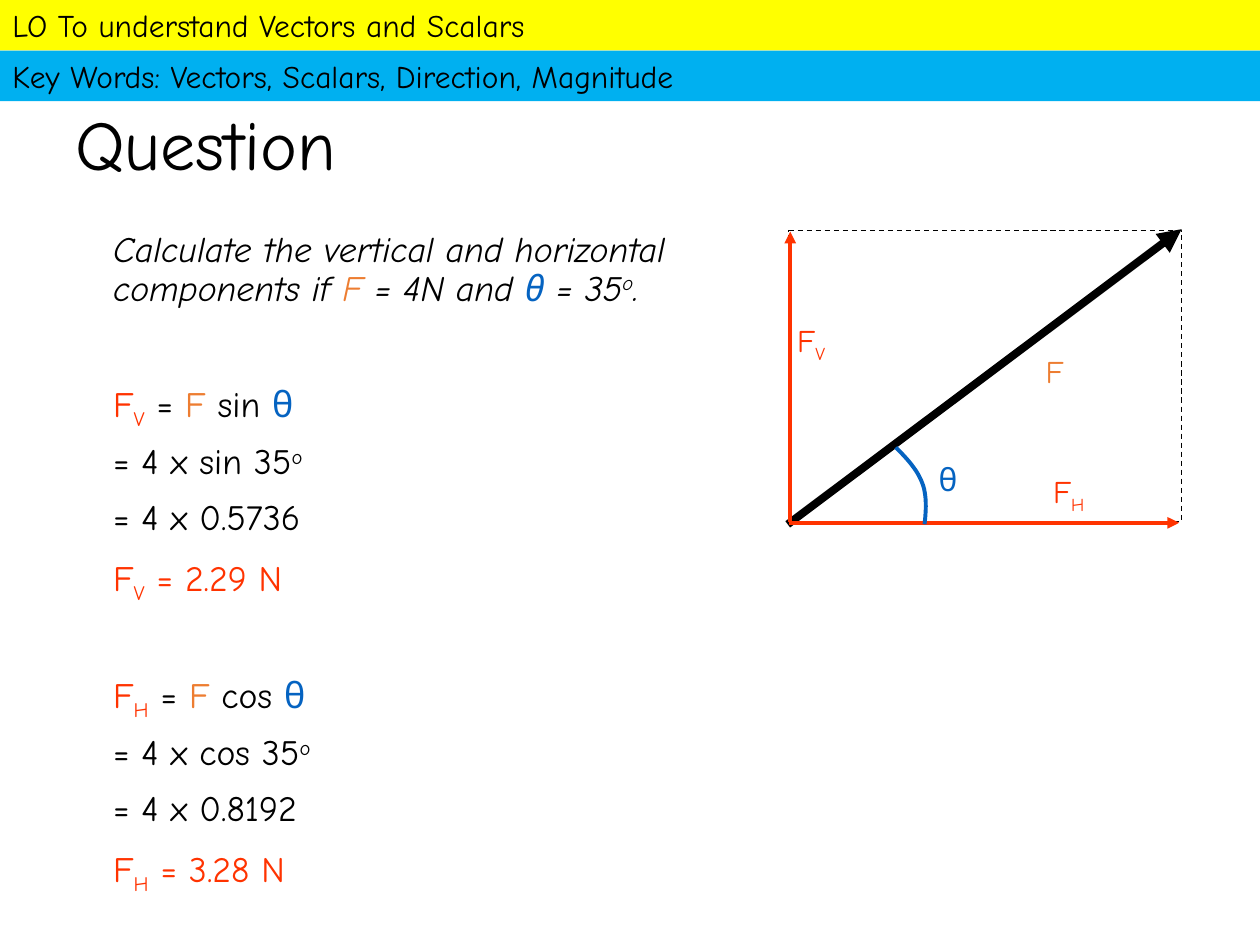
from lxml.etree import SubElement
from pptx import Presentation
from pptx.dml.color import RGBColor
from pptx.enum.dml import MSO_LINE
from pptx.enum.shapes import MSO_CONNECTOR, MSO_SHAPE
from pptx.enum.text import MSO_ANCHOR, PP_ALIGN
from pptx.oxml.ns import qn
from pptx.util import Cm, Pt

FONT = "Comic Neue"
COLOURS = {
    "ink": "000000",
    "objective": "FFFF00",
    "keywords": "00B0F0",
    "force": "ED7D31",
    "angle": "0563C1",
    "component": "FF3300",
}
SUPERSCRIPT, SUBSCRIPT = 30000, -25000
DEGREE = ("o", "ink", SUPERSCRIPT)


def colour(name):
    return RGBColor.from_string(COLOURS[name])


def write(paragraph, parts, size, italic=False):
    paragraph.alignment = PP_ALIGN.LEFT
    paragraph.font.name = FONT
    paragraph.font.size = Pt(size)
    paragraph.font.italic = italic
    for words, shade, *baseline in parts:
        run = paragraph.add_run()
        run.text = words
        run.font.color.rgb = colour(shade)
        if baseline:
            run.font._element.set("baseline", str(baseline[0]))


def add_text(shapes, left, top, width, height):
    frame = shapes.add_textbox(Cm(left), Cm(top), Cm(width), Cm(height)).text_frame
    frame.word_wrap = True
    return frame


def add_banner(slide, left, top, width, height, words, fill):
    banner = slide.shapes.add_shape(
        MSO_SHAPE.RECTANGLE, Cm(left), Cm(top), Cm(width), Cm(height)
    )
    banner.shadow.inherit = False
    banner.fill.solid()
    banner.fill.fore_color.rgb = colour(fill)
    banner.line.fill.background()
    banner.text_frame.vertical_anchor = MSO_ANCHOR.TOP
    write(banner.text_frame.paragraphs[0], [(words, "ink")], 18)


def add_title(slide, left, top, width, height):
    title = add_text(slide.shapes, left, top, width, height)
    title.vertical_anchor = MSO_ANCHOR.MIDDLE
    heading = title.paragraphs[0]
    heading.line_spacing = 0.9
    write(heading, [("Question", "ink")], 40)


def solve(direction, function, ratio, answer):
    symbol = [("F", "component"), (direction, "component", SUBSCRIPT)]
    return [
        symbol
        + [(" = ", "ink"), ("F", "force"), (f" {function} ", "ink"), ("θ", "angle")],
        [(f"= 4 x {function} 35", "ink"), DEGREE],
        [(f"= 4 x {ratio}", "ink")],
        symbol + [(f" = {answer} N", "component")],
    ]


def add_working(slide, left, top, width, height):
    working = add_text(slide.shapes, left, top, width, height)
    question = working.paragraphs[0]
    question.line_spacing = 0.9
    parts = [
        ("Calculate the vertical and horizontal components if ", "ink"),
        ("F", "force"),
        (" = 4N and ", "ink"),
        ("θ ", "angle"),
        ("= 35", "ink"),
        DEGREE,
        (".", "ink"),
    ]
    write(question, parts, 20.4, italic=True)
    solutions = [
        solve("V", "sin", "0.5736", "2.29"),
        solve("H", "cos", "0.8192", "3.28"),
    ]
    for solution in solutions:
        for number, step in enumerate(solution):
            line = working.add_paragraph()
            line.line_spacing = 0.9
            line.space_before = Pt(10 if number else 42)
            write(line, step, 20.4)


def add_vector(shapes, start, end, shade, weight):
    vector = shapes.add_connector(
        MSO_CONNECTOR.STRAIGHT, *(Cm(value) for value in (*start, *end))
    )
    vector.line.color.rgb = colour(shade)
    vector.line.width = Pt(weight)
    SubElement(vector.line._get_or_add_ln(), qn("a:tailEnd"), type="triangle")
    SubElement(vector._element.spPr, qn("a:effectLst"))


def curve(start, first, second, end, steps=12):
    for step in range(1, steps + 1):
        t = step / steps
        weights = ((1 - t) ** 3, 3 * t * (1 - t) ** 2, 3 * t**2 * (1 - t), t**3)
        yield tuple(
            sum(weight * value for weight, value in zip(weights, axis))
            for axis in zip(start, first, second, end)
        )


def add_angle(shapes, left, top):
    start, middle, end = (2.16, 4.37), (2.69, 5.08), (2.74, 5.92)
    points = [
        start,
        *curve(start, (2.39, 4.6), (2.59, 4.82), middle),
        *curve(middle, (2.79, 5.33), (2.77, 5.64), end),
    ]
    places = [(Cm(left + x), Cm(top + y)) for x, y in points]
    builder = shapes.build_freeform(*places[0])
    builder.add_line_segments(places[1:], close=False)
    arc = builder.convert_to_shape()
    arc.shadow.inherit = False
    arc.fill.background()
    arc.line.color.rgb = colour("angle")
    arc.line.width = Pt(2.25)


def add_diagram(slide, left, top, width, height):
    shapes = slide.shapes.add_group_shape().shapes
    right, bottom = left + width, top + height
    add_vector(shapes, (left - 0.02, bottom + 0.05), (right, top - 0.03), "ink", 4.5)

    outline = shapes.add_shape(
        MSO_SHAPE.RECTANGLE, Cm(left), Cm(top), Cm(width), Cm(height)
    )
    outline.shadow.inherit = False
    outline.fill.background()
    outline.line.color.rgb = colour("ink")
    outline.line.width = Pt(0.75)
    outline.line.dash_style = MSO_LINE.DASH

    add_vector(
        shapes, (left + 0.03, bottom), (left + 0.03, top + 0.02), "component", 2.25
    )
    add_vector(
        shapes, (left, bottom + 0.02), (right - 0.05, bottom + 0.02), "component", 2.25
    )
    add_angle(shapes, left, top)

    labels = [
        (4.93, 2.33, 1.32, [("F", "force")]),
        (-0.08, 1.7, 1.52, [("F", "component"), ("V", "component", SUBSCRIPT)]),
        (5.08, 4.75, 1.52, [("F", "component"), ("H", "component", SUBSCRIPT)]),
        (2.77, 4.49, 2.11, [("θ", "angle")]),
    ]
    for x, y, label_width, parts in labels:
        label = add_text(shapes, left + x, top + y, label_width, 1.02)
        write(label.paragraphs[0], parts, 18)


def main():
    presentation = Presentation()
    presentation.slide_width = Cm(25.4)
    presentation.slide_height = Cm(19.05)
    slide = presentation.slides.add_slide(presentation.slide_layouts[6])
    banners = [
        ("LO To understand Vectors and Scalars", "objective"),
        ("Key Words: Vectors, Scalars, Direction, Magnitude", "keywords"),
    ]
    for row, (words, fill) in enumerate(banners):
        add_banner(slide, 0, row * 1.02, 25.4, 1.02, words, fill)
    add_title(slide, 1.27, 2.01, 23.04, 1.93)
    add_working(slide, 2.03, 4.55, 12.9, 12.98)
    add_diagram(slide, 15.9, 4.65, 7.92, 5.87)
    presentation.save("out.pptx")


if __name__ == "__main__":
    main()
